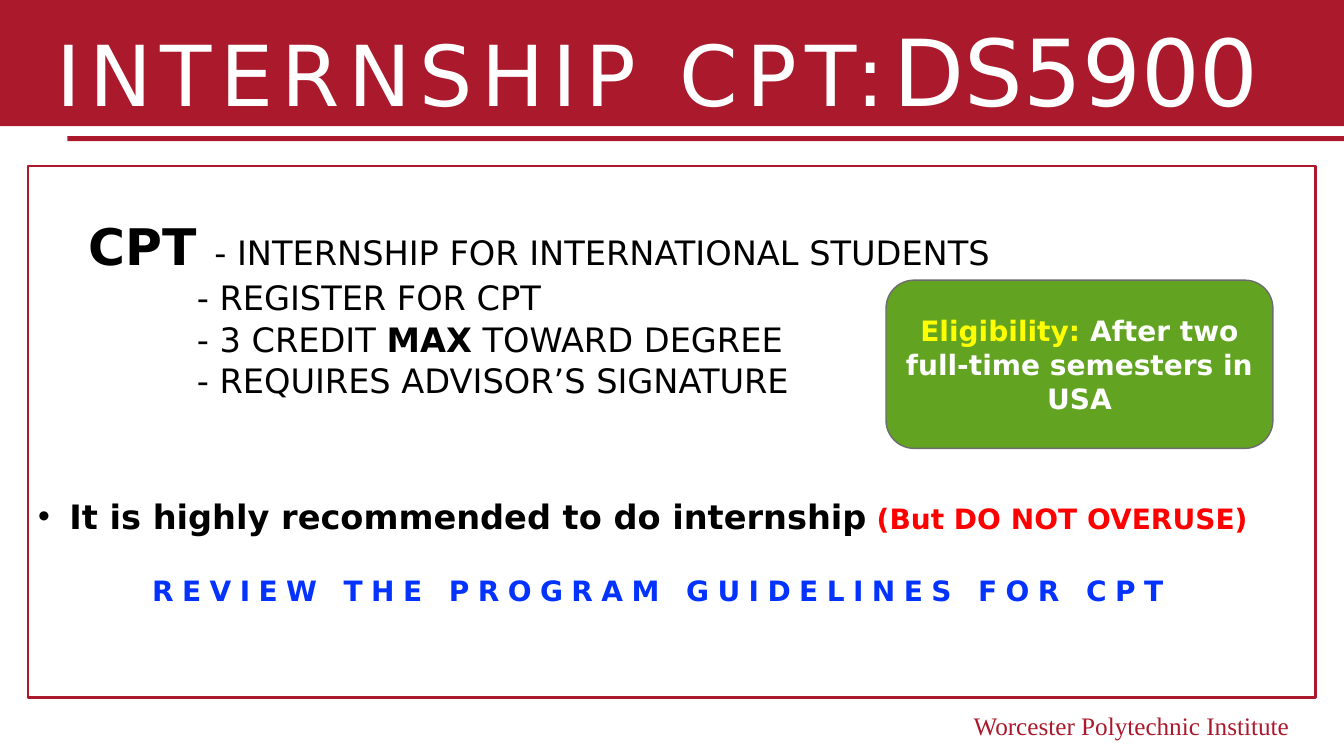
from dataclasses import dataclass

from lxml import etree
from pptx import Presentation
from pptx import util as u
from pptx.dml.color import RGBColor
from pptx.enum import shapes, text
from pptx.oxml import ns

SANS = "DejaVu Sans"
CRIMSON, WHITE, BLACK = "AB192D", "FFFFFF", "000000"


@dataclass
class Box:
    left: float
    top: float
    width: float
    height: float

    def lengths(self) -> list:
        return [u.Cm(v) for v in (self.left, self.top, self.width, self.height)]


@dataclass
class Run:
    words: str
    size: float | None = None
    color: str | None = None
    bold: bool | None = None
    spacing: float | None = None


@dataclass
class Line:
    runs: list[Run]
    size: float
    color: str = BLACK
    bold: bool = False
    font: str = SANS
    align: text.PP_ALIGN = text.PP_ALIGN.LEFT
    margin: float = 0
    before: float = 0
    bullet: bool = False


def rgb(color: str) -> RGBColor:
    return RGBColor.from_string(color)


def set_font(font, size, color, bold) -> None:
    if size is not None:
        font.size = u.Pt(size)
    if color is not None:
        font.color.rgb = rgb(color)
    if bold is not None:
        font.bold = bold


def write(frame, lines: list[Line], anchor=text.MSO_ANCHOR.TOP, top_inset: float = 0.13) -> None:
    frame.auto_size = text.MSO_AUTO_SIZE.NONE
    frame.word_wrap = True
    frame.vertical_anchor = anchor
    frame.margin_top = u.Cm(top_inset)
    for number, line in enumerate(lines):
        paragraph = frame.add_paragraph() if number else frame.paragraphs[0]
        paragraph.alignment = line.align
        paragraph.space_before = u.Pt(line.before)
        props = paragraph._p.get_or_add_pPr()
        props.set("marL", str(u.Cm(line.margin)))
        props.set("indent", str(-u.Cm(line.margin) if line.bullet else 0))
        if line.bullet:
            etree.SubElement(props, ns.qn("a:buFont")).set("typeface", "Arial")
            etree.SubElement(props, ns.qn("a:buChar")).set("char", "•")
        paragraph.font.name = line.font
        set_font(paragraph.font, line.size, line.color, line.bold)
        for part in line.runs:
            run = paragraph.add_run()
            run.text = part.words
            # Explicit values keep each run independent of the theme
            run.font.name = line.font
            set_font(run.font, part.size or line.size, part.color or line.color,
                     line.bold if part.bold is None else part.bold)
            if part.spacing is not None:
                run._r.get_or_add_rPr().set("spc", str(round(part.spacing * 100)))


def add_block(slide, box: Box, fill: str, outline: str | None = None, weight: float = 1,
              kind=shapes.MSO_SHAPE.RECTANGLE):
    block = slide.shapes.add_shape(kind, *box.lengths())
    block.shadow.inherit = False
    block.fill.solid()
    block.fill.fore_color.rgb = rgb(fill)
    if outline:
        block.line.color.rgb = rgb(outline)
        block.line.width = u.Pt(weight)
    else:
        block.line.fill.background()
    return block


def add_words(slide, box: Box, line: Line):
    words = slide.shapes.add_textbox(*box.lengths())
    write(words.text_frame, [line])
    return words


def main() -> None:
    deck = Presentation()
    deck.slide_width, deck.slide_height = u.Cm(33.87), u.Cm(19.05)
    slide = deck.slides.add_slide(deck.slide_layouts[5])
    center = text.PP_ALIGN.CENTER

    # Header rule, footer and title band
    add_block(slide, Box(1.7, 3.43, 32.17, 0.13), CRIMSON)
    add_words(slide, Box(20.32, 17.78, 12.42, 1.02),
              Line([Run("Worcester Polytechnic Institute")], 18, CRIMSON,
                   font="Times New Roman", align=text.PP_ALIGN.RIGHT))
    band = add_block(slide, Box(0, 0, 33.87, 3.18), CRIMSON)

    title = slide.shapes.title
    title.left, title.top, title.width, title.height = Box(0.58, 0.05, 32.72, 2.79).lengths()
    write(title.text_frame, [
        Line([Run("INTERNSHIP CPT:", spacing=6), Run("DS5900 ", 66, spacing=0)],
             60, WHITE, align=center),
    ], top_inset=0.31)
    title.text_frame.margin_bottom = 0
    band.element.addnext(title.element)

    # Main panel
    panel = add_block(slide, Box(0.71, 4.19, 32.44, 13.39), WHITE, CRIMSON, 1.75)
    steps = [
        [Run("- REGISTER FOR CPT")],
        [Run("- 3 CREDIT "), Run("MAX", bold=True), Run(" TOWARD DEGREE")],
        [Run("- REQUIRES ADVISOR’S SIGNATURE")],
    ]
    write(panel.text_frame, [
        Line([Run("CPT ", 36, bold=True), Run("- INTERNSHIP FOR INTERNATIONAL STUDENTS")],
             24, margin=1.27),
        *(Line(step, 24, margin=4, before=1) for step in steps),
        Line([Run("It is highly recommended to do internship"),
              Run(" (But DO NOT OVERUSE)", 20, "FF0000")],
             24, bold=True, margin=0.79, before=68, bullet=True),
    ], top_inset=1.23)

    # Guidelines reminder
    reminder = add_words(slide, Box(7.65, 14.33, 17.86, 2.54),
                         Line([Run("REVIEW THE PROGRAM GUIDELINES FOR CPT", spacing=6)],
                              20, "0432FF", True, align=center))
    reminder.text_frame.word_wrap = False

    # Eligibility callout
    eligibility = add_block(slide, Box(22.33, 7.06, 9.75, 4.24), "62A421", "6D6D6D",
                            kind=shapes.MSO_SHAPE.ROUNDED_RECTANGLE)
    write(eligibility.text_frame, [
        Line([Run("Eligibility: ", color="FFFF00"), Run("After two full-time semesters in USA")],
             20, WHITE, True, align=center),
    ], text.MSO_ANCHOR.MIDDLE)

    deck.save("out.pptx")


if __name__ == "__main__":
    main()
